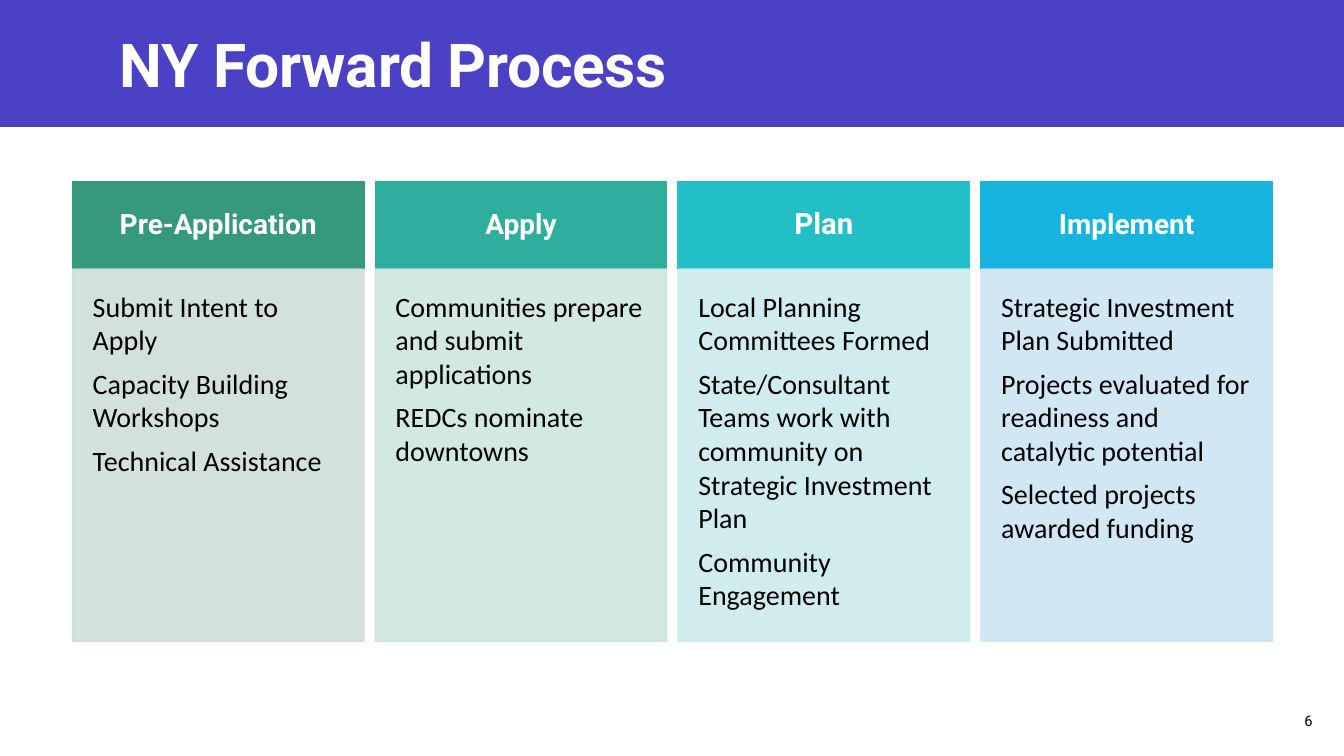
from lxml.etree import SubElement
from pptx import Presentation
from pptx.dml.color import RGBColor
from pptx.enum.shapes import MSO_SHAPE
from pptx.enum.text import MSO_ANCHOR, PP_ALIGN
from pptx.oxml.ns import qn
from pptx.util import Pt

WHITE = RGBColor(0xFF, 0xFF, 0xFF)
BLACK = RGBColor(0x00, 0x00, 0x00)
BANNER = RGBColor(0x4A, 0x41, 0xC5)

TITLE = "NY Forward Process"
PAGE_NUMBER = "6"

# heading, heading size, heading colour, body colour, steps
STAGES = [
    ("Pre-Application", 20, RGBColor(0x37, 0x99, 0x7B), RGBColor(0xCE, 0xDE, 0xD7), [
        "Submit Intent to Apply",
        "Capacity Building Workshops",
        "Technical Assistance",
    ]),
    ("Apply", 20, RGBColor(0x2E, 0xAF, 0x9E), RGBColor(0xCC, 0xE6, 0xE1), [
        "Communities prepare and submit applications",
        "REDCs nominate downtowns",
    ]),
    ("Plan", 21, RGBColor(0x23, 0xBF, 0xC6), RGBColor(0xCC, 0xEA, 0xED), [
        "Local Planning Committees Formed",
        "State/Consultant Teams work with community on Strategic Investment Plan",
        "Community Engagement",
    ]),
    ("Implement", 20, RGBColor(0x17, 0xB4, 0xDF), RGBColor(0xCC, 0xE5, 0xF3), [
        "Strategic Investment Plan Submitted",
        "Projects evaluated for readiness and catalytic potential",
        "Selected projects awarded funding",
    ]),
]

SLIDE_WIDTH, SLIDE_HEIGHT = 960, 540
BANNER_HEIGHT = 90.7
COLUMN_LEFT, COLUMN_TOP = 51.8, 129.6
COLUMN_WIDTH, COLUMN_PITCH = 208.2, 216.3
HEADING_HEIGHT, BODY_HEIGHT = 62.6, 265.8
HEADING_INSET, BODY_INSET = 16.5, 14.4
STEP_GAP = 7


def add_rectangle(slide, left, top, width, height, color, opacity=100, outlined=True):
    shape = slide.shapes.add_shape(
        MSO_SHAPE.RECTANGLE, Pt(left), Pt(top), Pt(width), Pt(height))
    shape.shadow.inherit = False
    shape.fill.solid()
    shape.fill.fore_color.rgb = color
    if outlined:
        shape.line.color.rgb = color
        shape.line.width = Pt(1)
    else:
        shape.line.fill.background()
    if opacity < 100:
        for color_element in shape.element.spPr.iter(qn("a:srgbClr")):
            SubElement(color_element, qn("a:alpha"), val=str(opacity * 1000))
    return shape


def write_text(shape, lines, size, font_name, color, bold=False,
               align=PP_ALIGN.LEFT, anchor=MSO_ANCHOR.MIDDLE, inset=None,
               line_spacing=None, space_after=None):
    text_frame = shape.text_frame
    text_frame.word_wrap = True
    text_frame.vertical_anchor = anchor
    if inset is not None:
        text_frame.margin_left = text_frame.margin_right = Pt(inset)
        text_frame.margin_top = text_frame.margin_bottom = Pt(inset)
    text_frame.text = "\n".join(lines)
    for paragraph in text_frame.paragraphs:
        paragraph.alignment = align
        if line_spacing is not None:
            paragraph.line_spacing = line_spacing
        if space_after is not None:
            paragraph.space_after = Pt(space_after)
        for run in paragraph.runs:
            run.font.size = Pt(size)
            run.font.name = font_name
            run.font.bold = bold
            run.font.color.rgb = color


def add_stage(slide, left, heading, heading_size, heading_color, body_color, steps):
    heading_box = add_rectangle(
        slide, left, COLUMN_TOP, COLUMN_WIDTH, HEADING_HEIGHT, heading_color)
    write_text(heading_box, [heading], heading_size, "Roboto", WHITE, bold=True,
               align=PP_ALIGN.CENTER, inset=HEADING_INSET, line_spacing=0.9,
               space_after=STEP_GAP)
    body_box = add_rectangle(
        slide, left, COLUMN_TOP + HEADING_HEIGHT, COLUMN_WIDTH, BODY_HEIGHT,
        body_color, opacity=90)
    write_text(body_box, steps, 20, "Calibri", BLACK, anchor=MSO_ANCHOR.TOP,
               inset=BODY_INSET, space_after=STEP_GAP)


def main():
    presentation = Presentation()
    presentation.slide_width = Pt(SLIDE_WIDTH)
    presentation.slide_height = Pt(SLIDE_HEIGHT)
    slide = presentation.slides.add_slide(presentation.slide_layouts[6])

    add_rectangle(slide, 0, 0, SLIDE_WIDTH, BANNER_HEIGHT, BANNER, outlined=False)
    title = slide.shapes.add_textbox(Pt(78.5), Pt(15.1), Pt(789), Pt(59.8))
    write_text(title, [TITLE], 43.2, "Roboto", WHITE, bold=True)
    title_run = title.text_frame.paragraphs[0].runs[0]
    title_run.font._element.set("spc", "-20")

    for index, stage in enumerate(STAGES):
        add_stage(slide, COLUMN_LEFT + index * COLUMN_PITCH, *stage)

    page_number = slide.shapes.add_textbox(Pt(895), Pt(500.4), Pt(49.7), Pt(28.8))
    write_text(page_number, [PAGE_NUMBER], 10.5, "Roboto", BLACK, align=PP_ALIGN.RIGHT)

    presentation.save("out.pptx")


if __name__ == "__main__":
    main()
